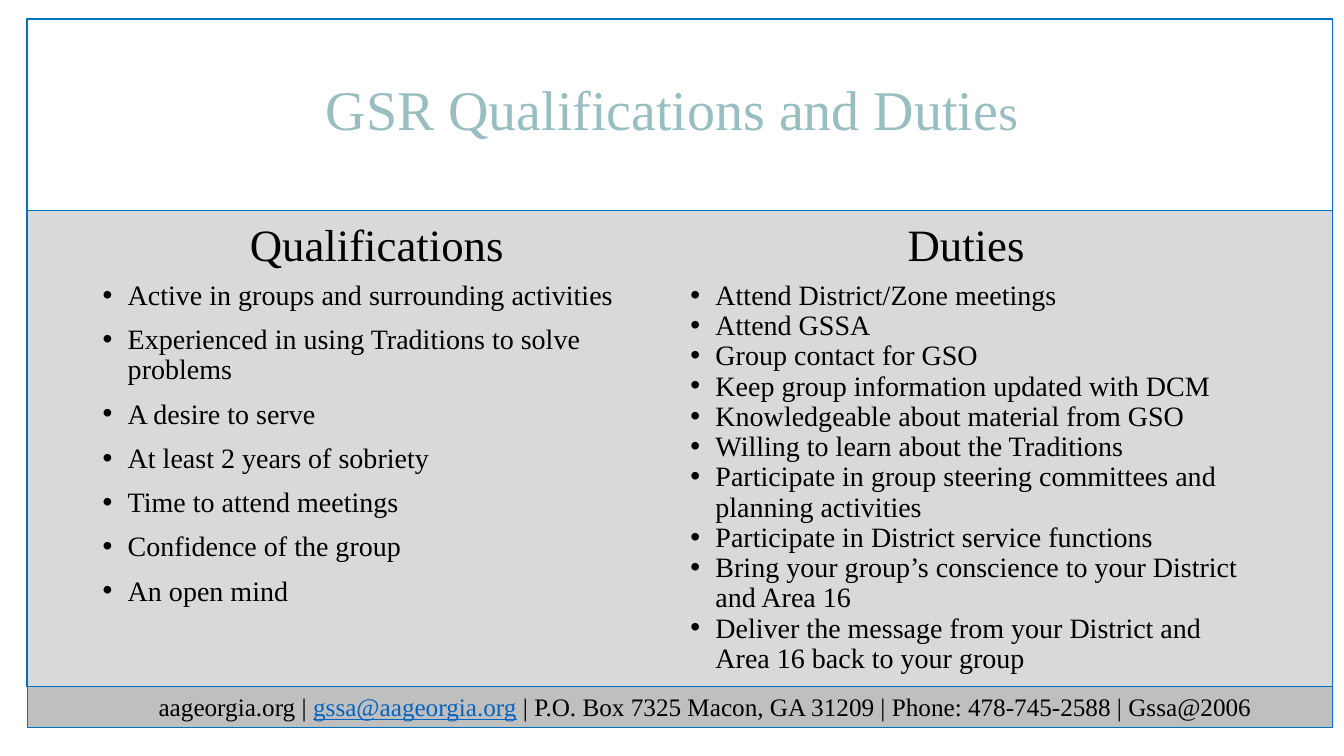
from lxml.etree import SubElement
from pptx import Presentation
from pptx.dml.color import RGBColor
from pptx.enum.shapes import MSO_SHAPE
from pptx.enum.text import MSO_ANCHOR, PP_ALIGN
from pptx.oxml.ns import qn
from pptx.util import Pt


def tint(code):
    return RGBColor.from_string(code)


class Deck:
    face = "Times New Roman"
    ink = "000000"
    edge = "0070C0"
    indent = 18

    def __init__(self):
        self.show = Presentation()
        self.show.slide_width = Pt(960)
        self.show.slide_height = Pt(540)
        self.slide = self.show.slides.add_slide(self.show.slide_layouts[6])

    def panel(self, left, top, width, height, fill=None, weight=1):
        shape = self.slide.shapes.add_shape(
            MSO_SHAPE.RECTANGLE, Pt(left), Pt(top), Pt(width), Pt(height))
        shape.shadow.inherit = False
        if fill:
            shape.fill.solid()
            shape.fill.fore_color.rgb = tint(fill)
        else:
            shape.fill.background()
        shape.line.color.rgb = tint(self.edge)
        shape.line.width = Pt(weight)
        return shape

    def box(self, left, top, width, height, anchor=MSO_ANCHOR.TOP):
        frame = self.slide.shapes.add_textbox(
            Pt(left), Pt(top), Pt(width), Pt(height)).text_frame
        frame.word_wrap = True
        frame.vertical_anchor = anchor
        return frame

    def style(self, para, size, color=None):
        para.font.name = self.face
        para.font.size = Pt(size)
        para.font.color.rgb = tint(color or self.ink)

    def head(self, frame, text, size, color=None):
        para = frame.paragraphs[0]
        para.alignment = PP_ALIGN.CENTER
        para.add_run().text = text
        self.style(para, size, color)
        return para

    def bullets(self, frame, items, gap):
        for index, item in enumerate(items):
            para = frame.paragraphs[0] if index == 0 else frame.add_paragraph()
            para.line_spacing = 0.9
            para.space_before = Pt(gap if index else 0)
            props = para._p.get_or_add_pPr()
            props.set("marL", str(Pt(self.indent)))
            props.set("indent", str(-Pt(self.indent)))
            SubElement(props, qn("a:buFont")).set("typeface", "Arial")
            SubElement(props, qn("a:buChar")).set("char", "•")
            para.add_run().text = item
            self.style(para, 20)

    def column(self, left, width, title, items, gap):
        label = self.box(left, 132.5, width, 64.8, MSO_ANCHOR.BOTTOM)
        self.head(label, title, 32).line_spacing = 0.9
        self.bullets(self.box(left, 197.3, width, 290), items, gap)

    def footer(self, shape, start, mail, rest):
        frame = shape.text_frame
        frame.word_wrap = True
        frame.vertical_anchor = MSO_ANCHOR.TOP
        para = self.head(frame, start, 18)
        para._p.get_or_add_pPr().set("marL", str(Pt(36)))
        link = para.add_run()
        link.text = mail
        link.font.color.rgb = tint("0563C1")
        link.font.underline = True
        para.add_run().text = rest


def main():
    deck = Deck()
    left, width = 19.4, 932.4
    base = deck.panel(left, 490.6, width, 28.8, "BFBFBF", 0.5)
    deck.footer(base, "aageorgia.org | ", "gssa@aageorgia.org",
                " | P.O. Box 7325 Macon, GA 31209 | Phone: 478-745-2588 | Gssa@2006")
    deck.panel(left, 150.4, width, 340.2, "D9D9D9")
    deck.panel(left, 13.6, width, 136.8)

    title = deck.head(deck.box(110.9, 49.7, 738, 55.4),
                      "GSR Qualifications and Dutie", 40, "99BEC1")
    tail = title.add_run()
    tail.text = "s"
    tail.font.size = Pt(36)

    deck.column(66.2, 406.1, "Qualifications", [
        "Active in groups and surrounding activities",
        "Experienced in using Traditions to solve problems",
        "A desire to serve",
        "At least 2 years of sobriety",
        "Time to attend meetings",
        "Confidence of the group",
        "An open mind",
    ], 10)
    deck.column(486, 408.2, "Duties", [
        "Attend District/Zone meetings",
        "Attend GSSA",
        "Group contact for GSO",
        "Keep group information updated with DCM",
        "Knowledgeable about material from GSO",
        "Willing to learn about the Traditions",
        "Participate in group steering committees and planning activities",
        "Participate in District service functions",
        "Bring your group’s conscience to your District and Area 16",
        "Deliver the message from your District and Area 16 back to your group",
    ], 0)
    deck.show.save("out.pptx")


if __name__ == "__main__":
    main()
